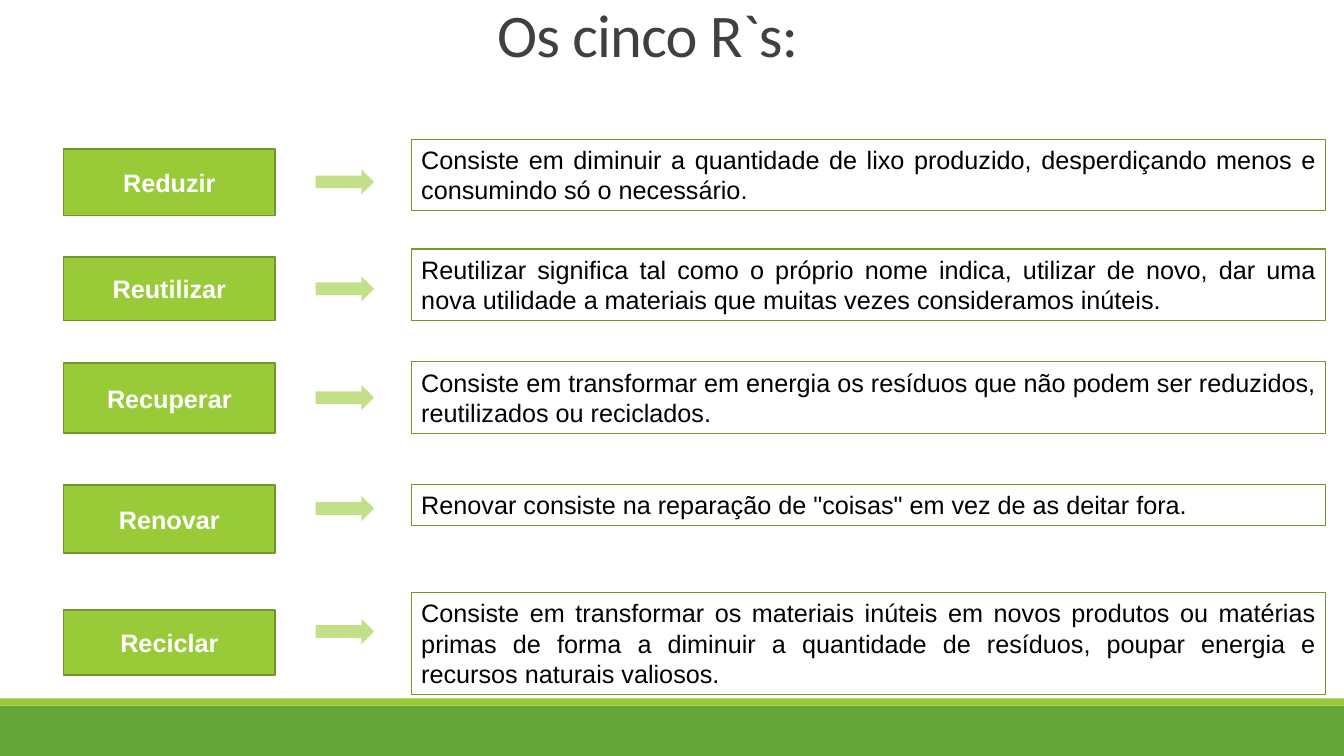
import pptx
import pptx.dml.color
import pptx.enum.shapes
import pptx.enum.text
import pptx.util

Inches = pptx.util.Inches
Shape = pptx.enum.shapes.MSO_SHAPE
Align = pptx.enum.text.PP_ALIGN
Anchor = pptx.enum.text.MSO_ANCHOR

SLIDE_WIDTH, SLIDE_HEIGHT = 13.33, 7.5
NAME_LEFT, NAME_WIDTH = 0.63, 2.1
ARROW_LEFT, ARROW_WIDTH, ARROW_HEIGHT = 3.13, 0.58, 0.25
MEANING_LEFT, MEANING_WIDTH = 4.08, 9.07

# Name, its top and height, arrow top, meaning, its top and height
FIVE_RS = [
    ("Reduzir", 1.48, 0.66, 1.68,
     "Consiste em diminuir a quantidade de lixo produzido, desperdiçando menos e "
     "consumindo só o necessário.", 1.38, 0.71),
    ("Reutilizar", 2.55, 0.63, 2.74,
     "Reutilizar significa tal como o próprio nome indica, utilizar de novo, dar uma "
     "nova utilidade a materiais que muitas vezes consideramos inúteis.", 2.47, 0.71),
    ("Recuperar", 3.6, 0.7, 3.82,
     "Consiste em transformar em energia os resíduos que não podem ser reduzidos, "
     "reutilizados ou reciclados.", 3.59, 0.71),
    ("Renovar", 4.81, 0.68, 4.92,
     'Renovar consiste na reparação de "coisas" em vez de as deitar fora.', 4.81, 0.4),
    ("Reciclar", 6.05, 0.65, 6.14,
     "Consiste em transformar os materiais inúteis em novos produtos ou matérias "
     "primas de forma a diminuir a quantidade de resíduos, poupar energia e "
     "recursos naturais valiosos.", 5.88, 1.01),
]


def color(hex_string):
    return pptx.dml.color.RGBColor.from_string(hex_string)


def write_text(shape, text, size=18, font="Arial", fill="000000", bold=False,
               align=Align.LEFT, anchor=Anchor.TOP, line_spacing=None, tracking=None):
    """Fill the shape with one paragraph; tracking is in points."""
    frame = shape.text_frame
    frame.word_wrap = True
    frame.vertical_anchor = anchor
    frame.margin_left = frame.margin_right = Inches(0.1)
    frame.margin_top = frame.margin_bottom = Inches(0.05)
    paragraph = frame.paragraphs[0]
    paragraph.alignment = align
    if line_spacing:
        paragraph.line_spacing = line_spacing
    run = paragraph.add_run()
    run.text = text
    run.font.size = pptx.util.Pt(size)
    run.font.name = font
    run.font.bold = bold
    run.font.color.rgb = color(fill)
    if tracking:
        run._r.get_or_add_rPr().set("spc", str(int(tracking * 100)))


def add_box(slide, kind, left, top, width, height, fill=None, line=None, line_width=1):
    shape = slide.shapes.add_shape(
        kind, Inches(left), Inches(top), Inches(width), Inches(height))
    shape.shadow.inherit = False
    if fill:
        shape.fill.solid()
        shape.fill.fore_color.rgb = color(fill)
    else:
        shape.fill.background()
    if line:
        shape.line.color.rgb = color(line)
        shape.line.width = pptx.util.Pt(line_width)
    else:
        shape.line.fill.background()
    return shape


def add_footer_bands(slide, top):
    add_box(slide, Shape.RECTANGLE, 0, top + 0.07, SLIDE_WIDTH,
            SLIDE_HEIGHT - top - 0.07, fill="63A537")
    add_box(slide, Shape.RECTANGLE, 0, top, SLIDE_WIDTH, 0.07, fill="99CB38")


def add_title(slide, left, top, width, height):
    title = slide.shapes.title
    title.left, title.top = Inches(left), Inches(top)
    title.width, title.height = Inches(width), Inches(height)
    write_text(title, "Os cinco R`s:", size=43.2, font="Calibri", fill="404040",
               anchor=Anchor.MIDDLE, line_spacing=0.75, tracking=-0.5)
    title.text_frame.auto_size = pptx.enum.text.MSO_AUTO_SIZE.NONE


def add_r_row(slide, name, name_top, name_height, arrow_top,
              meaning, meaning_top, meaning_height):
    name_box = add_box(slide, Shape.RECTANGLE, NAME_LEFT, name_top, NAME_WIDTH,
                       name_height, fill="99CB38", line="719629", line_width=1.25)
    write_text(name_box, name, fill="FFFFFF", bold=True,
               align=Align.CENTER, anchor=Anchor.MIDDLE)
    add_box(slide, Shape.RIGHT_ARROW, ARROW_LEFT, arrow_top,
            ARROW_WIDTH, ARROW_HEIGHT, fill="C2E088")
    meaning_box = add_box(slide, Shape.RECTANGLE, MEANING_LEFT, meaning_top,
                          MEANING_WIDTH, meaning_height, line="739A28", line_width=0.75)
    write_text(meaning_box, meaning, align=Align.JUSTIFY)


def main():
    presentation = pptx.Presentation()
    presentation.slide_width = Inches(SLIDE_WIDTH)
    presentation.slide_height = Inches(SLIDE_HEIGHT)
    slide = presentation.slides.add_slide(presentation.slide_layouts[5])
    add_footer_bands(slide, 6.93)
    add_title(slide, 4.83, 0.06, 5.95, 0.7)
    for row in FIVE_RS:
        add_r_row(slide, *row)
    presentation.save("out.pptx")


if __name__ == "__main__":
    main()
